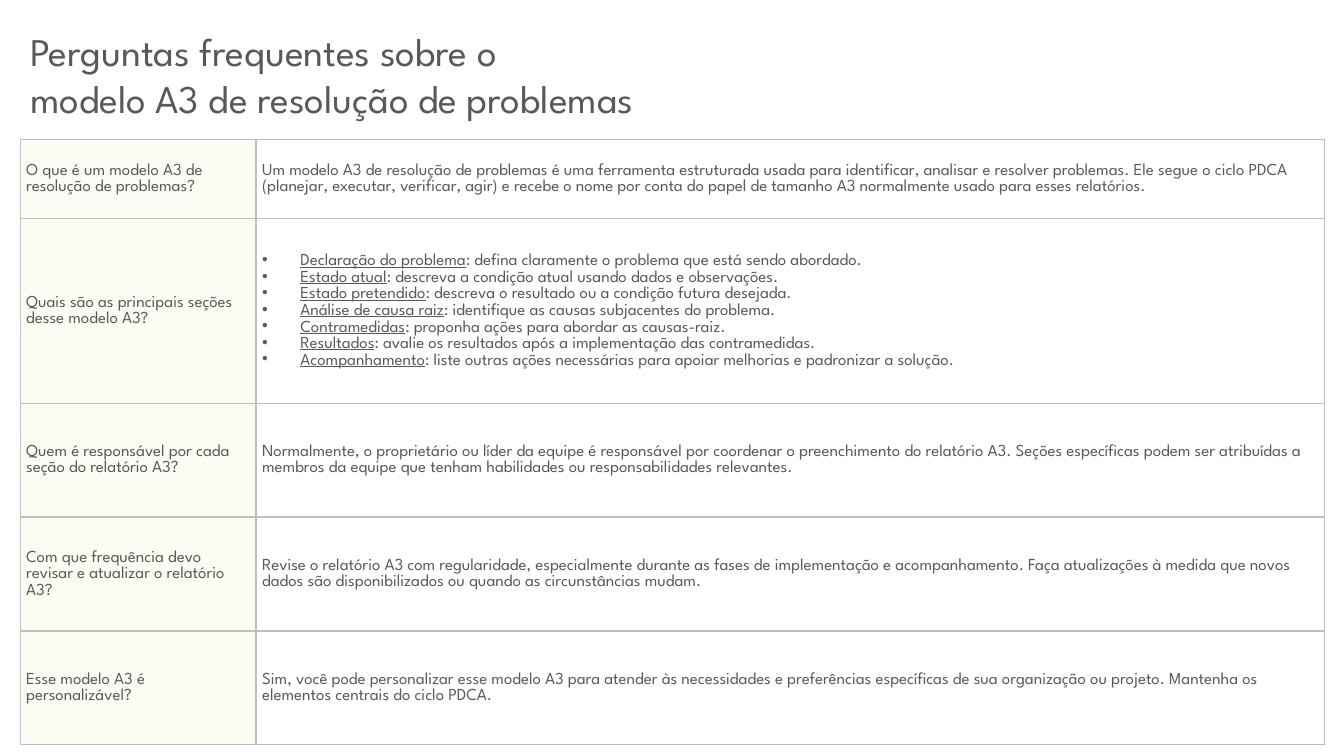
from lxml.etree import SubElement
from pptx import Presentation
from pptx.dml.color import RGBColor
from pptx.enum.text import MSO_ANCHOR, MSO_AUTO_SIZE, PP_ALIGN
from pptx.oxml import parse_xml
from pptx.oxml.ns import nsdecls, qn
from pptx.util import Inches, Pt

FONT, INK, LINE, TINT = "League Spartan", "595959", "BFBFBF", "FBFDF5"
COLS = [2.34, 10.6]
ROWS = [0.79, 1.83, 1.13, 1.13, 1.13]
PARTS = [
    ("Declaração do problema", "defina claramente o problema que está sendo abordado."),
    ("Estado atual", "descreva a condição atual usando dados e observações."),
    ("Estado pretendido", "descreva o resultado ou a condição futura desejada."),
    ("Análise de causa raiz", "identifique as causas subjacentes do problema."),
    ("Contramedidas", "proponha ações para abordar as causas-raiz."),
    ("Resultados", "avalie os resultados após a implementação das contramedidas."),
    ("Acompanhamento", "liste outras ações necessárias para apoiar melhorias e padronizar a solução."),
]
FAQ = [
    ("O que é um modelo A3 de resolução de problemas?",
     "Um modelo A3 de resolução de problemas é uma ferramenta estruturada usada para identificar, "
     "analisar e resolver problemas. Ele segue o ciclo PDCA (planejar, executar, verificar, agir) e "
     "recebe o nome por conta do papel de tamanho A3 normalmente usado para esses relatórios."),
    ("Quais são as principais seções desse modelo A3?", PARTS),
    ("Quem é responsável por cada seção do relatório A3?",
     "Normalmente, o proprietário ou líder da equipe é responsável por coordenar o preenchimento do "
     "relatório A3. Seções específicas podem ser atribuídas a membros da equipe que tenham habilidades "
     "ou responsabilidades relevantes."),
    ("Com que frequência devo revisar e atualizar o relatório A3?",
     "Revise o relatório A3 com regularidade, especialmente durante as fases de implementação e "
     "acompanhamento. Faça atualizações à medida que novos dados são disponibilizados ou quando as "
     "circunstâncias mudam."),
    ("Esse modelo A3 é personalizável?",
     "Sim, você pode personalizar esse modelo A3 para atender às necessidades e preferências "
     "específicas de sua organização ou projeto. Mantenha os elementos centrais do ciclo PDCA."),
]


def color(code):
    return RGBColor.from_string(code)


def write(para, text, size=12, spacing=1.07, under=False):
    """Add text to a paragraph; each newline becomes a line break."""
    para.alignment = PP_ALIGN.LEFT
    para.line_spacing = spacing
    for i, line in enumerate(text.split("\n")):
        if i:
            para.add_line_break()
            SubElement(para._p[-1], qn("a:rPr"), sz=str(size * 100))
        run = para.add_run()
        run.text = line
        font = run.font
        font.name, font.size, font.underline = FONT, Pt(size), under
        font.color.rgb = color(INK)


def bullet(para, indent=0.38):
    props = para._p.get_or_add_pPr()
    props.set("marL", str(Inches(indent)))
    props.set("indent", str(-Inches(indent)))
    SubElement(props, qn("a:buChar"), char="•")


def border(cell):
    props = cell._tc.get_or_add_tcPr()
    for i, side in enumerate("LRTB"):
        props.insert(i, parse_xml(
            f'<a:ln{side} {nsdecls("a")} w="{Pt(1)}"><a:solidFill>'
            f'<a:srgbClr val="{LINE}"/></a:solidFill></a:ln{side}>'))


def fill_cell(cell, content, tint=None):
    cell.vertical_anchor = MSO_ANCHOR.MIDDLE
    cell.margin_left = cell.margin_right = Inches(0.06)
    cell.margin_top = cell.margin_bottom = 0
    if tint:
        cell.fill.solid()
        cell.fill.fore_color.rgb = color(tint)
    else:
        cell.fill.background()
    border(cell)
    frame = cell.text_frame
    if isinstance(content, str):
        write(frame.paragraphs[0], content)
        return
    for i, (term, text) in enumerate(content):
        para = frame.add_paragraph() if i else frame.paragraphs[0]
        bullet(para)
        write(para, term, under=True)
        write(para, f": {text}")


def add_title(slide, left, top, width, height):
    title = slide.shapes.title
    title.left, title.top, title.width, title.height = map(Inches, (left, top, width, height))
    frame = title.text_frame
    frame.word_wrap = True
    frame.auto_size = MSO_AUTO_SIZE.SHAPE_TO_FIT_TEXT
    frame.vertical_anchor = MSO_ANCHOR.TOP
    write(frame.paragraphs[0], "Perguntas frequentes sobre o \nmodelo A3 de resolução de problemas",
          size=28, spacing=1.0)


def add_faq(slide, left, top):
    box = map(Inches, (left, top, sum(COLS), sum(ROWS)))
    table = slide.shapes.add_table(len(ROWS), len(COLS), *box).table
    table.first_row = table.horz_banding = False
    for col, width in zip(table.columns, COLS):
        col.width = Inches(width)
    for row, height, (ask, reply) in zip(table.rows, ROWS, FAQ):
        row.height = Inches(height)
        fill_cell(row.cells[0], ask, tint=TINT)
        fill_cell(row.cells[1], reply)


def main():
    deck = Presentation()
    deck.slide_width, deck.slide_height = Inches(13.33), Inches(7.5)
    slide = deck.slides.add_slide(deck.slide_layouts[5])
    add_faq(slide, 0.2, 1.38)
    add_title(slide, 0.2, 0.22, 7.77, 1.04)
    deck.save("out.pptx")


if __name__ == "__main__":
    main()
